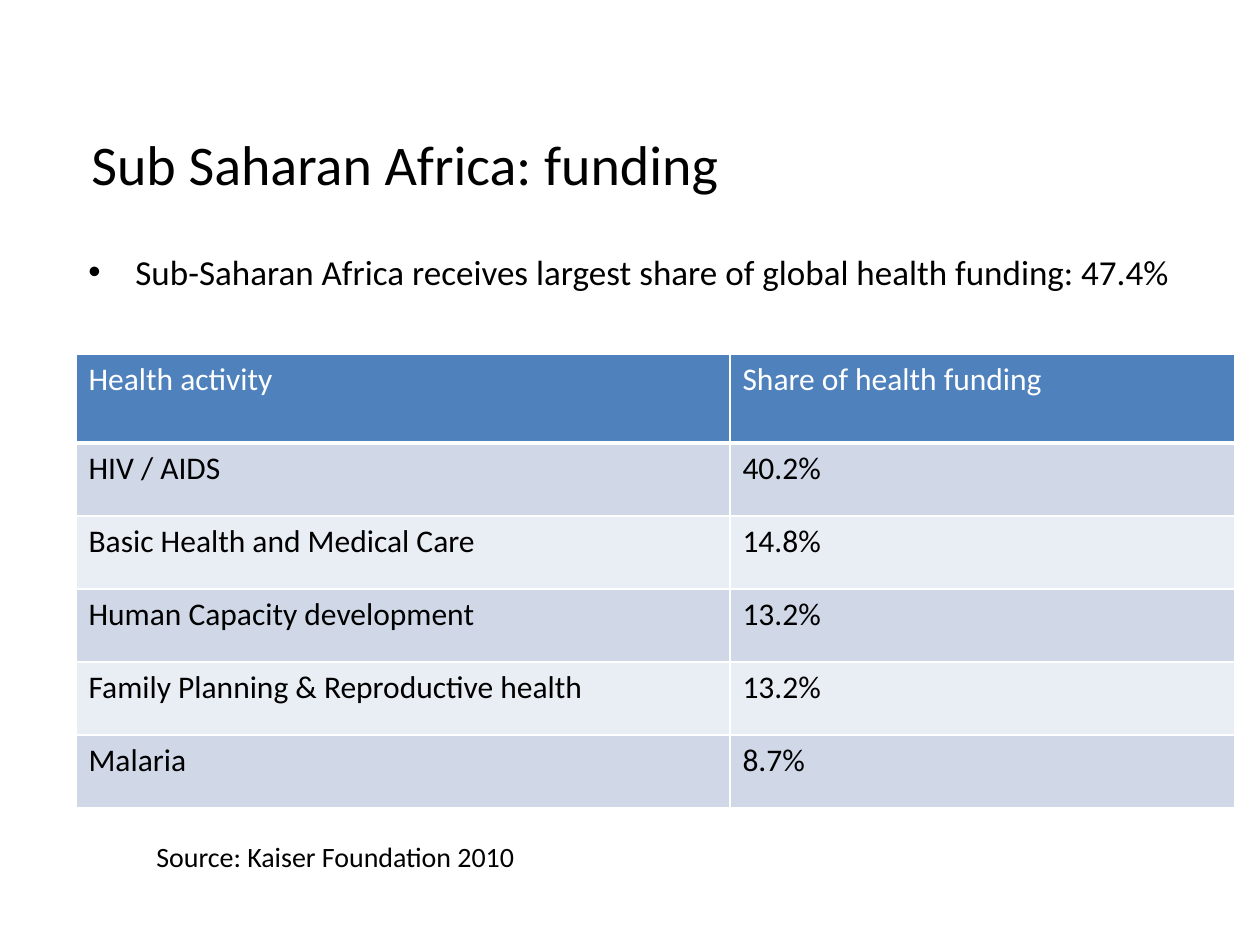
from lxml import etree
from pptx import Presentation
from pptx import util as u
from pptx.dml import color
from pptx.oxml import ns

SCALE = u.Inches(1) / 126
ROWS = [
    ("Health activity", "Share of health funding"),
    ("HIV / AIDS", "40.2%"),
    ("Basic Health and Medical Care", "14.8%"),
    ("Human Capacity development", "13.2%"),
    ("Family Planning & Reproductive health", "13.2%"),
    ("Malaria", "8.7%"),
]


def px(length):
    return u.Emu(round(length * SCALE))


def rgb(value):
    return color.RGBColor.from_string(value)


class FundingSlide:
    """Holds the text style and the slide that elements are added to."""

    font_name = "Calibri"
    ink = "000000"
    paper = "FFFFFF"
    header_fill = "4F81BD"
    band_fills = ("E9EDF4", "D0D8E8")

    def __init__(self, deck):
        self.slide = deck.slides.add_slide(deck.slide_layouts[6])

    def style(self, para, size, ink):
        para.font.name = self.font_name
        para.font.size = u.Pt(size)
        para.font.bold = False
        para.font.color.rgb = rgb(ink)

    def text(self, words, left, top, width, height, size, indent=0):
        box = self.slide.shapes.add_textbox(*map(px, (left, top, width, height)))
        box.text_frame.word_wrap = True
        para = box.text_frame.paragraphs[0]
        para.text = words
        if indent:
            props = para._p.get_or_add_pPr()
            props.set("marL", str(px(indent)))
            props.set("indent", str(-px(indent)))
            etree.SubElement(props, ns.qn("a:buFont"), typeface="Arial")
            etree.SubElement(props, ns.qn("a:buChar"), char="•")
        self.style(para, size, self.ink)

    def border(self, cell, side, points):
        line = etree.SubElement(
            cell._tc.get_or_add_tcPr(), ns.qn(f"a:ln{side}"), w=str(u.Pt(points))
        )
        fill = etree.SubElement(line, ns.qn("a:solidFill"))
        etree.SubElement(fill, ns.qn("a:srgbClr"), val=self.paper)

    def table(self, rows, left, top, widths, heights, size):
        frame = self.slide.shapes.add_table(
            len(rows), len(widths), *map(px, (left, top, sum(widths), sum(heights)))
        )
        table = frame.table
        for column, width in zip(table.columns, widths):
            column.width = px(width)
        for r, (values, height) in enumerate(zip(rows, heights)):
            table.rows[r].height = px(height)
            for c, value in enumerate(values):
                cell = table.cell(r, c)
                cell.text = value
                for side in "LRTB":
                    self.border(cell, side, 3 if r == 0 and side == "B" else 1)
                cell.fill.solid()
                fill = self.band_fills[r % 2] if r else self.header_fill
                cell.fill.fore_color.rgb = rgb(fill)
                ink = self.ink if r else self.paper
                self.style(cell.text_frame.paragraphs[0], size, ink)


def main():
    deck = Presentation()
    deck.slide_width, deck.slide_height = px(1260), px(945)
    page = FundingSlide(deck)
    page.text(
        "Sub-Saharan Africa receives largest share of global health funding: 47.4%",
        76, 244, 1125, 89, 20, indent=47,
    )
    page.table(ROWS, 76, 354, (654, 505), [89] + [73] * 5, 18)
    page.text("Sub Saharan Africa: funding", 79, 123, 1124, 100, 32)
    page.text("Source: Kaiser Foundation 2010", 144, 833, 546, 49, 16)
    deck.save("out.pptx")


if __name__ == "__main__":
    main()
